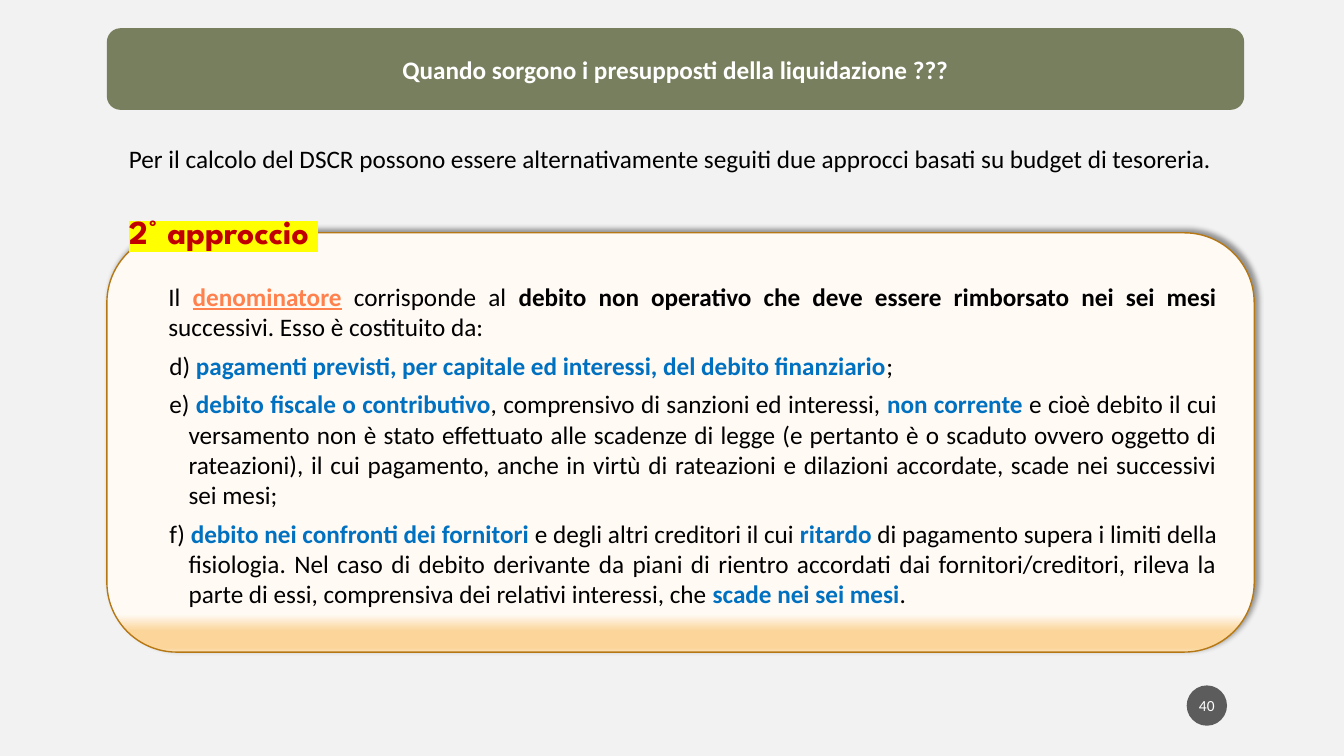
from lxml import etree
from pptx import Presentation
from pptx import util as u
from pptx.dml import color
from pptx.enum import shapes, text
from pptx.oxml import ns, parse_xml

BLACK, WHITE, BLUE, ORANGE = "000000", "FFFFFF", "0070C0", "FF814D"
KEY = {"color": BLUE, "bold": True}
STOPS = [(91, "FFFAF4"), (95, "FBD599"), (99, "FBD599"), (100, "FCE3BB")]
DEBTS = [
    [("Il ", {}), ("denominatore", {"color": ORANGE, "bold": True, "underline": True}),
     (" corrisponde al ", {}),
     ("debito non operativo che deve essere rimborsato nei sei mesi ", {"bold": True}),
     ("successivi. Esso è costituito da: ", {})],
    [("d) ", {}),
     ("pagamenti previsti, per capitale ed interessi, del debito finanziario", KEY),
     (";", {})],
    [("e) ", {}), ("debito fiscale o contributivo", KEY),
     (", comprensivo di sanzioni ed interessi, ", {}), ("non corrente ", KEY),
     ("e cioè debito il cui versamento non è stato effettuato alle scadenze di legge "
      "(e pertanto è o scaduto ovvero oggetto di rateazioni), il cui pagamento, anche in "
      "virtù di rateazioni e dilazioni accordate, scade nei successivi sei mesi;", {})],
    [("f) ", {}), ("debito nei confronti dei fornitori ", KEY),
     ("e degli altri creditori il cui ", {}), ("ritardo", KEY),
     (" di pagamento supera i limiti della fisiologia. Nel caso di debito derivante da "
      "piani di rientro accordati dai fornitori/creditori, rileva la parte di essi, "
      "comprensiva dei relativi interessi, che ", {}),
     ("scade nei sei mesi", KEY), (". ", {})],
]


def rgb(value):
    """Turn a hex string into a colour."""
    return color.RGBColor.from_string(value)


def add_xml(parent, tag, **attrs):
    """Append a drawing element to its parent."""
    return etree.SubElement(parent, ns.qn(tag), {k: str(v) for k, v in attrs.items()})


def add_run(p, words, size=18, font="Calibri", color=BLACK, bold=False,
            underline=False, highlight=None):
    """Add formatted text to a paragraph."""
    r = p.add_run()
    r.text = words
    f = r.font
    f.size, f.name, f.bold, f.underline = u.Pt(size), font, bold, underline
    f.color.rgb = rgb(color)
    if highlight:
        mark = parse_xml(f'<a:highlight {ns.nsdecls("a")}><a:srgbClr val="{highlight}"/></a:highlight>')
        r._r.rPr.find(ns.qn("a:solidFill")).addnext(mark)


def place(sp, box):
    """Move a shape to a box given in inches."""
    sp.left, sp.top, sp.width, sp.height = map(u.Inches, box)


def set_frame(sp, anchor=text.MSO_ANCHOR.TOP, side=0.1):
    """Set the wrapping, anchor and insets of a text frame."""
    tf = sp.text_frame
    tf.word_wrap, tf.auto_size, tf.vertical_anchor = True, text.MSO_AUTO_SIZE.NONE, anchor
    tf.margin_left = tf.margin_right = u.Inches(side)
    tf.margin_top = tf.margin_bottom = u.Inches(0.05)
    return tf


def add_shape(s, kind, box, fill):
    """Draw a flat shape without outline."""
    sp = s.shapes.add_shape(kind, *map(u.Inches, box))
    sp.shadow.inherit = False
    sp.fill.solid()
    sp.fill.fore_color.rgb = rgb(fill)
    sp.line.fill.background()
    return sp


def add_panel(s, box):
    """Draw the cream panel with its gradient and shadow."""
    sp = add_shape(s, shapes.MSO_SHAPE.ROUNDED_RECTANGLE, box, STOPS[0][1])
    sp.line.color.rgb, sp.line.width = rgb("B67815"), u.Pt(1)
    grad = etree.Element(ns.qn("a:gradFill"), rotWithShape="1")
    stops = add_xml(grad, "a:gsLst")
    for pos, value in STOPS:
        add_xml(add_xml(stops, "a:gs", pos=pos * 1000), "a:srgbClr", val=value)
    add_xml(grad, "a:lin", ang=90 * 60000, scaled=0)
    spPr = sp._element.spPr
    spPr.replace(spPr.find(ns.qn("a:solidFill")), grad)
    shadow = add_xml(spPr.find(ns.qn("a:effectLst")), "a:outerShdw", blurRad=u.Pt(4),
                     dist=u.Pt(3), dir=315 * 60000, algn="bl", rotWithShape=0)
    add_xml(add_xml(shadow, "a:srgbClr", val=BLACK), "a:alpha", val=40000)


def add_title(s, box):
    """Set the title on its green banner."""
    add_shape(s, shapes.MSO_SHAPE.ROUNDED_RECTANGLE, box, "777F5E")
    sp = s.shapes.title
    place(sp, box)
    s.shapes._spTree.append(sp._element)
    p = set_frame(sp, text.MSO_ANCHOR.MIDDLE).paragraphs[0]
    p.alignment = text.PP_ALIGN.CENTER
    add_run(p, "Quando sorgono i presupposti della liquidazione ???", color=WHITE, bold=True)


def add_label(s, box, words, **style):
    """Add one line of free text."""
    sp = s.shapes.add_textbox(*map(u.Inches, box))
    add_run(set_frame(sp).paragraphs[0], words, **style)


def add_debts(s, box):
    """Fill the body placeholder with the list of debts."""
    sp = s.placeholders[1]
    place(sp, box)
    s.shapes._spTree.append(sp._element)
    tf = set_frame(sp)
    for i, runs in enumerate(DEBTS):
        p = tf.add_paragraph() if i else tf.paragraphs[0]
        pPr = p._p.get_or_add_pPr()
        pPr.set("marL", str(u.Inches(0.59 if i else 0.39)))
        pPr.set("indent", str(u.Inches(-0.19 if i else 0)))
        add_xml(pPr, "a:buNone")
        p.alignment = text.PP_ALIGN.JUSTIFY
        p.space_before = u.Pt(6 if i else 0)
        for words, style in runs:
            add_run(p, words, **style)


def add_page_number(s, box):
    """Draw the page number in its translucent disc."""
    sp = add_shape(s, shapes.MSO_SHAPE.OVAL, box, "1D1D1D")
    fill = sp._element.spPr.find(ns.qn("a:solidFill"))
    add_xml(fill[0], "a:alpha", val=70000)
    p = set_frame(sp, text.MSO_ANCHOR.MIDDLE, side=0.02).paragraphs[0]
    p.alignment = text.PP_ALIGN.CENTER
    add_run(p, "40", size=11, color=WHITE)


def main():
    """Build the slide and save it."""
    prs = Presentation()
    prs.slide_width, prs.slide_height = u.Inches(13.33), u.Inches(7.5)
    s = prs.slides.add_slide(prs.slide_layouts[1])
    s.background.fill.solid()
    s.background.fill.fore_color.rgb = rgb("F2F2F2")
    add_panel(s, (1.06, 2.31, 11.38, 4.16))
    add_page_number(s, (11.77, 6.8, 0.4, 0.4))
    add_title(s, (1.06, 0.28, 11.28, 0.81))
    add_label(s, (1.18, 1.37, 11.17, 0.4),
              "Per il calcolo del DSCR possono essere alternativamente seguiti "
              "due approcci basati su budget di tesoreria.")
    add_label(s, (1.18, 2.04, 10.99, 0.42), "2° approccio ", size=24,
              font="League Spartan", color="C00000", bold=True, highlight="FFFF00")
    add_debts(s, (1.18, 2.74, 10.99, 3.38))
    prs.save("out.pptx")


if __name__ == "__main__":
    main()
